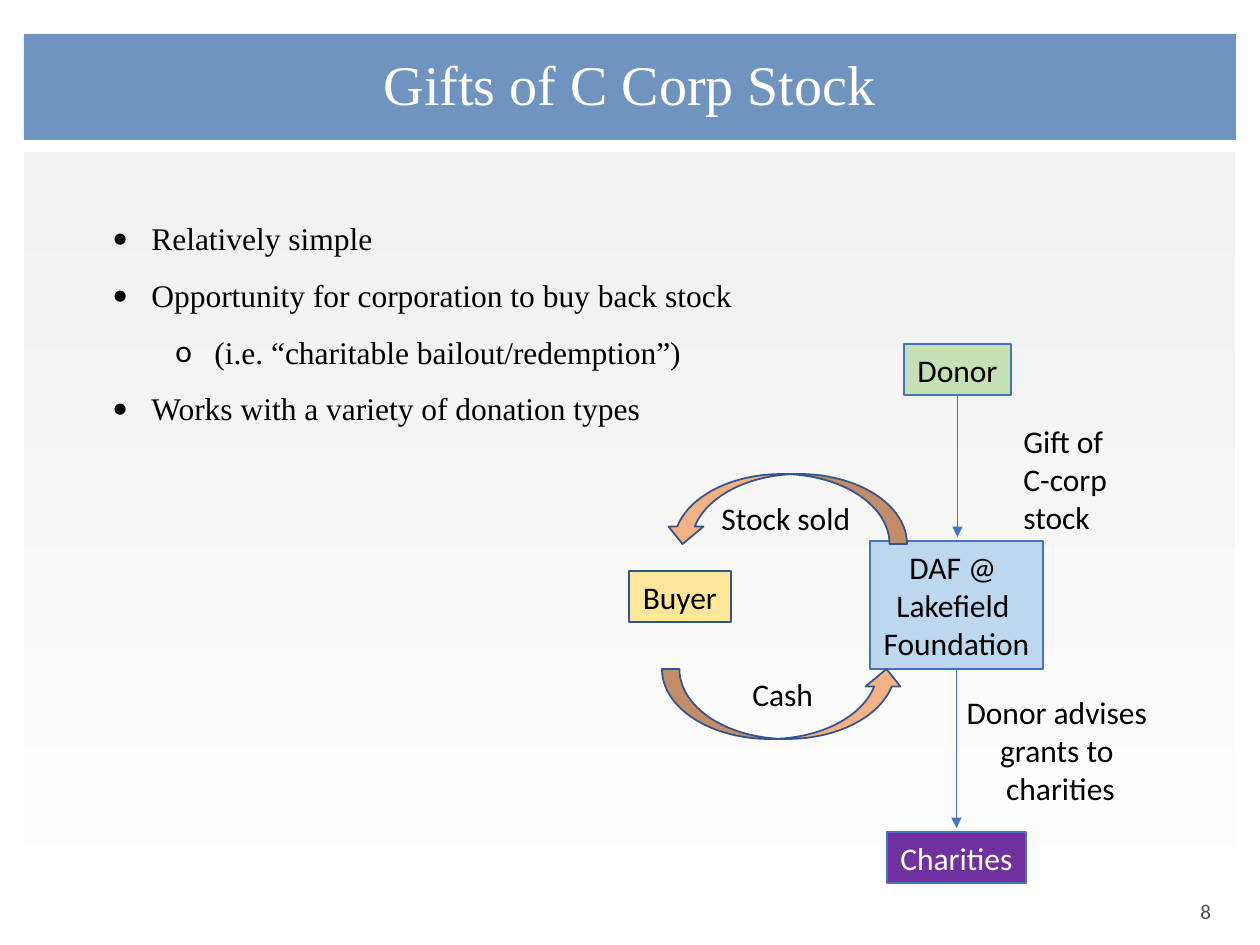
from pptx import Presentation
from pptx.dml.color import RGBColor
from pptx.enum.shapes import MSO_CONNECTOR as LINE, MSO_SHAPE as SHAPE
from pptx.enum.text import MSO_ANCHOR as ANCHOR, PP_ALIGN as ALIGN
from pptx.oxml.ns import qn
from pptx.util import Emu, Pt
from lxml.etree import SubElement

PX = 914400 / 126
SERIF, SANS = "Times New Roman", "Calibri"
BLUE, NAVY = "4472C4", "325491"

TITLE = "Gifts of C Corp Stock"
BULLETS = [
    (1, "•", "Relatively simple"),
    (1, "•", "Opportunity for corporation to buy back stock"),
    (2, "o", "(i.e. “charitable bailout/redemption”)"),
    (1, "•", "Works with a variety of donation types"),
]
BULLET_LEFT = {1: 102, 2: 165}
BULLET_HANG = 39

PARTIES = {
    "donor": ((904, 344, 107, 51), "C5E0B4", BLUE, "000000", ["Donor"]),
    "fund": ((870, 541, 173, 128), "BDD7EE", BLUE, "000000",
             ["DAF @ ", "Lakefield ", "Foundation"]),
    "buyer": ((629, 571, 102, 51), "FFE699", NAVY, "000000", ["Buyer"]),
    "charities": ((887, 832, 139, 51), "7030A0", BLUE, "FFFFFF", ["Charities"]),
}
LABELS = [
    ((1011, 416, 117, 128), ALIGN.LEFT, ["Gift of", "C-corp", "stock"]),
    ((709, 493, 155, 51), ALIGN.LEFT, ["Stock sold"]),
    ((740, 669, 87, 51), ALIGN.LEFT, ["Cash"]),
    ((953, 687, 215, 128), ALIGN.CENTER,
     ["Donor advises ", "grants to ", "charities"]),
]
EXCHANGES = [((662, 669, 242, 70), 0), ((665, 474, 242, 70), 180)]
FLOWS = [("donor", "fund"), ("fund", "charities")]
FLOW_GAP = 4


def px(length):
    return Emu(round(length * PX))


def color(value):
    return RGBColor.from_string(value)


def add_block(kind, at, fill=None, outline=None, weight=0.75):
    block = slide.shapes.add_shape(kind, *map(px, at))
    block.shadow.inherit = False
    if fill:
        block.fill.solid()
        block.fill.fore_color.rgb = color(fill)
    if outline:
        block.line.color.rgb = color(outline)
        block.line.width = Pt(weight)
    else:
        block.line.fill.background()
    return block


def add_label(at, wrap=False):
    label = slide.shapes.add_textbox(*map(px, at))
    label.text_frame.word_wrap = wrap
    return label


def write(frame, lines, font=SANS, size=18, ink="000000", align=ALIGN.LEFT):
    for index, line in enumerate(lines):
        paragraph = frame.paragraphs[0] if index == 0 else frame.add_paragraph()
        paragraph.alignment = align
        run = paragraph.add_run()
        run.text = line
        run.font.name = font
        run.font.size = Pt(size)
        run.font.color.rgb = color(ink)


def set_bullet(paragraph, level, mark):
    paragraph.level = level
    props = paragraph._p.get_or_add_pPr()
    props.set("marL", str(px(BULLET_LEFT[level])))
    props.set("indent", str(-px(BULLET_HANG)))
    SubElement(props, qn("a:buFont")).set("typeface", SANS)
    SubElement(props, qn("a:buChar")).set("char", mark)
    paragraph.line_spacing = 1.5


def add_flow(source, target):
    start, end = boxes[source], boxes[target]
    x = start.left + start.width // 2
    flow = slide.shapes.add_connector(
        LINE.STRAIGHT, x, start.top + start.height, x, end.top - px(FLOW_GAP))
    flow.begin_connect(start, 2)
    flow.line.color.rgb = color(BLUE)
    flow.line.width = Pt(0.5)
    SubElement(flow.line._get_or_add_ln(), qn("a:tailEnd")).set("type", "triangle")
    SubElement(flow._element.spPr, qn("a:effectLst"))


deck = Presentation()
deck.slide_width, deck.slide_height = px(1260), px(945)
slide = deck.slides.add_slide(deck.slide_layouts[6])

panel = add_block(SHAPE.RECTANGLE, (24, 152, 1211, 793))
panel.fill.gradient()
panel.fill.gradient_angle = 270
for stop, (position, shade) in zip(panel.fill.gradient_stops,
                                   [(0, "F1F0F0"), (1, "FFFFFF")]):
    stop.position = position
    stop.color.rgb = color(shade)

page_number = add_label((1188, 892, 95, 72))
write(page_number.text_frame, ["8"], size=12, ink="4D4D4F")

banner = add_block(SHAPE.RECTANGLE, (24, 34, 1212, 106), "6F94C0")
title = banner.text_frame
title.margin_left = title.margin_right = title.margin_top = title.margin_bottom = 0
title.vertical_anchor = ANCHOR.MIDDLE
write(title, [TITLE], SERIF, 32, "FFFFFF", ALIGN.CENTER)
title.paragraphs[0].line_spacing = 0.9

points = add_label((37, 194, 1124, 294), wrap=True).text_frame
write(points, [text for _, _, text in BULLETS], SERIF)
for paragraph, (level, mark, _) in zip(points.paragraphs, BULLETS):
    set_bullet(paragraph, level, mark)

boxes = {}
for party, (at, fill, outline, ink, lines) in PARTIES.items():
    boxes[party] = add_block(SHAPE.RECTANGLE, at, fill, outline)
    boxes[party].text_frame.word_wrap = False
    write(boxes[party].text_frame, lines, ink=ink, align=ALIGN.CENTER)

for at, turn in EXCHANGES:
    add_block(SHAPE.CURVED_UP_ARROW, at, "F4B183", NAVY, 1).rotation = turn

for at, align, lines in LABELS:
    write(add_label(at).text_frame, lines, align=align)

for source, target in FLOWS:
    add_flow(source, target)

deck.save("out.pptx")
